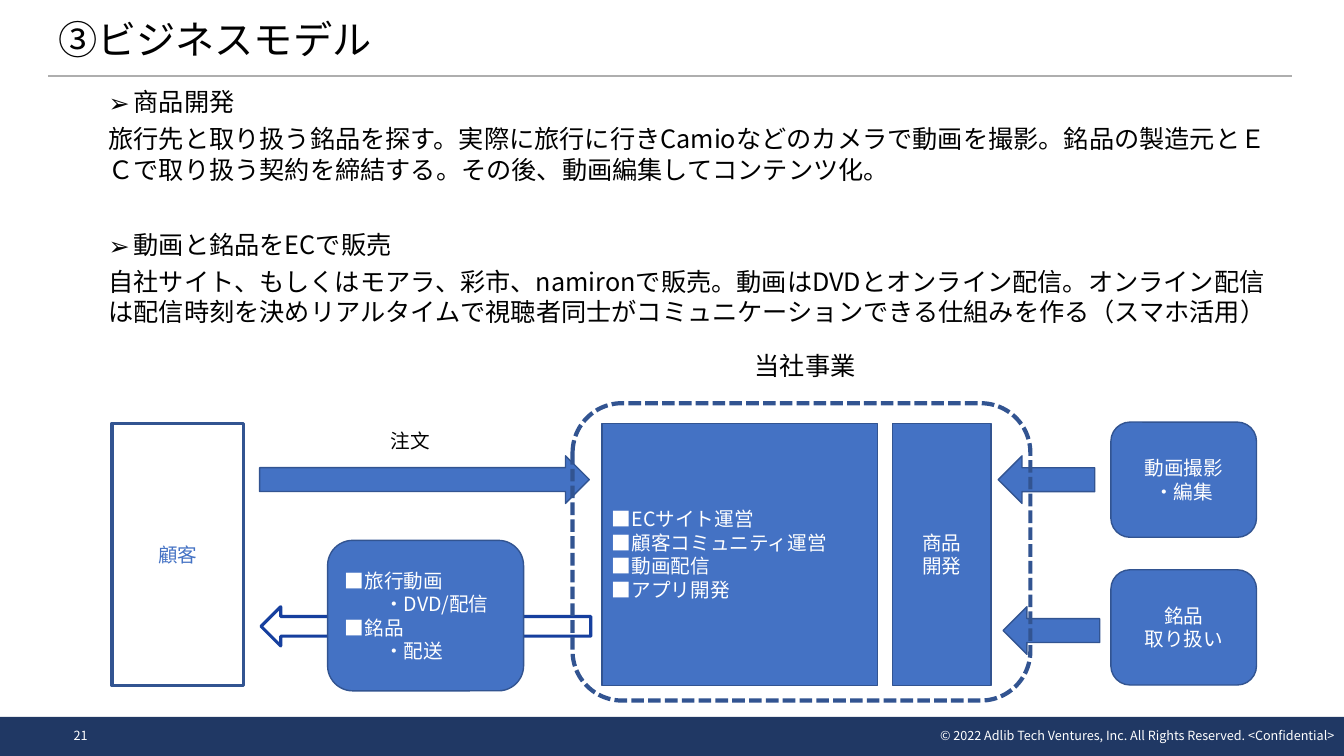
from lxml.etree import SubElement
from pptx import Presentation
from pptx.dml.color import RGBColor
from pptx.enum.dml import MSO_LINE
from pptx.enum.shapes import MSO_CONNECTOR, MSO_SHAPE
from pptx.enum.text import MSO_ANCHOR, PP_ALIGN
from pptx.oxml.ns import qn
from pptx.util import Pt

FONT = "Noto Sans CJK JP"
BLUE, EDGE, NAVY, WHITE, BLACK = "4472C4", "325491", "203864", "FFFFFF", "000000"
LEFT, CENTER, RIGHT = PP_ALIGN.LEFT, PP_ALIGN.CENTER, PP_ALIGN.RIGHT
PLAN = [
    ("商品開発",
     "旅行先と取り扱う銘品を探す。実際に旅行に行きCamioなどのカメラで動画を撮影。"
     "銘品の製造元とＥＣで取り扱う契約を締結する。その後、動画編集してコンテンツ化。"),
    ("動画と銘品をECで販売",
     "自社サイト、もしくはモアラ、彩市、namironで販売。動画はDVDとオンライン配信。"
     "オンライン配信は配信時刻を決めリアルタイムで視聴者同士が"
     "コミュニケーションできる仕組みを作る（スマホ活用）"),
]


def rgb(value):
    """Turn a hex string into a colour."""
    return RGBColor.from_string(value)


def write(para, text, size=14, color=WHITE, align=LEFT, before=0, spacing=None,
          margin=0, hanging=0, bullet=None):
    """Put formatted text into a paragraph."""
    props = para._p.get_or_add_pPr()
    props.set("marL", str(Pt(margin)))
    props.set("indent", str(-Pt(hanging)))
    para.alignment = align
    para.space_before = Pt(before)
    if spacing:
        para.line_spacing = spacing
    if bullet:
        SubElement(props, qn("a:buFont"), typeface=FONT)
        SubElement(props, qn("a:buChar"), char=bullet)
    span = para.add_run()
    span.text = text
    span.font.name = FONT
    span.font.size = Pt(size)
    span.font.color.rgb = rgb(color)
    SubElement(span._r.get_or_add_rPr(), qn("a:ea"), typeface=FONT)


def write_lines(frame, lines, **style):
    """Write one paragraph per line; lines opening with a dot are indented under squares."""
    squared = lines[0].startswith("■")
    for index, line in enumerate(lines):
        para = frame.paragraphs[0] if index == 0 else frame.add_paragraph()
        nested = squared and line.startswith("・")
        write(para, line, margin=28 if nested else 0, **style)


def add_text(page, area, lines=(), wrap=True, anchor=MSO_ANCHOR.TOP, **style):
    """Add a text box and return its frame."""
    frame = page.shapes.add_textbox(*map(Pt, area)).text_frame
    frame.word_wrap = wrap
    frame.vertical_anchor = anchor
    if lines:
        write_lines(frame, lines, **style)
    return frame


def add_box(page, kind, area, lines=(), fill=BLUE, line=EDGE, width=1, dash=None,
            turn=0, **style):
    """Add a preset shape, with optional text."""
    box = page.shapes.add_shape(kind, *map(Pt, area))
    box.shadow.inherit = False
    box.rotation = turn
    if fill:
        box.fill.solid()
        box.fill.fore_color.rgb = rgb(fill)
    else:
        box.fill.background()
    if line:
        box.line.color.rgb = rgb(line)
        box.line.width = Pt(width)
        if dash:
            box.line.dash_style = dash
    else:
        box.line.fill.background()
    if lines:
        box.text_frame.word_wrap = True
        box.text_frame.vertical_anchor = MSO_ANCHOR.MIDDLE
        write_lines(box.text_frame, lines, **style)


def add_rule(page, start, end, y):
    """Add the grey line under the title."""
    rule = page.shapes.add_connector(MSO_CONNECTOR.STRAIGHT, *map(Pt, (start, y, end, y)))
    rule.line.color.rgb = rgb("AEAEAE")
    rule.line.width = Pt(1.5)
    SubElement(rule._element.spPr, qn("a:effectLst"))


def add_plan(page):
    """Add the two headed paragraphs."""
    frame = add_text(page, (34.5, 58.3, 888.5, 441))
    for index, (heading, detail) in enumerate(PLAN):
        para = frame.add_paragraph() if index else frame.paragraphs[0]
        write(para, heading, size=18, color=BLACK, before=32 if index else 0,
              margin=54, hanging=18, bullet="➢")
        write(frame.add_paragraph(), detail, size=18, color=BLACK, before=5, margin=36)


def add_diagram(page):
    """Add the flow between customer, company and suppliers."""
    rect, rounded, arrow = MSO_SHAPE.RECTANGLE, MSO_SHAPE.ROUNDED_RECTANGLE, MSO_SHAPE.RIGHT_ARROW
    top, height = 302.4, 187.2
    add_box(page, arrow, (186.5, 433.4, 235.5, 28), fill=WHITE, line="163F9E", width=2.25, turn=180)
    for y, lines in ((301.5, ["動画撮影", "・編集"]), (407, ["銘品", "取り扱い"])):
        add_box(page, rounded, (793.5, y, 104, 82.3), lines, align=CENTER)
    add_box(page, rect, (637.5, top, 70.5, height), ["商品", "開発"], align=CENTER)
    add_box(page, rect, (80, top, 94, height), ["顧客"], fill=None, width=2.5,
            color=BLUE, align=CENTER)
    add_box(page, rounded, (234, 386, 140, 107.5),
            ["■旅行動画", "・DVD/配信", "■銘品", "・配送"])
    add_box(page, rect, (430, top, 197, height),
            ["■ECサイト運営", "■顧客コミュニティ運営", "■動画配信", "■アプリ開発"])
    add_box(page, arrow, (185.5, 325.6, 235.5, 34))
    for x, y in ((713, 325.6), (716.5, 433.4)):
        add_box(page, arrow, (x, y, 69, 34), turn=180)
    add_text(page, (272, 303, 54, 33), ["注文"], wrap=False, color=BLACK)
    add_box(page, rounded, (409, 288, 327, 212.4), fill=None, width=3, dash=MSO_LINE.SQUARE_DOT)
    add_text(page, (532, 247, 111, 39.6), ["当社事業"], wrap=False, size=18, color=BLACK)


def main():
    """Build and save the business model slide."""
    deck = Presentation()
    deck.slide_width, deck.slide_height = Pt(960), Pt(540)
    page = deck.slides.add_slide(deck.slide_layouts[6])
    middle = MSO_ANCHOR.MIDDLE
    add_box(page, MSO_SHAPE.RECTANGLE, (0, 512, 960, 28), fill=NAVY, line=None)
    add_rule(page, 34.5, 923, 54)
    add_text(page, (34.5, 9.4, 716, 41), ["③ビジネスモデル"], anchor=middle,
             size=28, color=BLACK, spacing=0.9)
    add_plan(page)
    add_text(page, (34.5, 511, 46, 29), ["21"], anchor=middle, size=9, align=CENTER)
    add_text(page, (509, 511, 451, 29),
             ["© 2022 Adlib Tech Ventures, Inc. All Rights Reserved. <Confidential>"],
             anchor=middle, size=9, align=RIGHT)
    add_diagram(page)
    deck.save("out.pptx")


if __name__ == "__main__":
    main()
